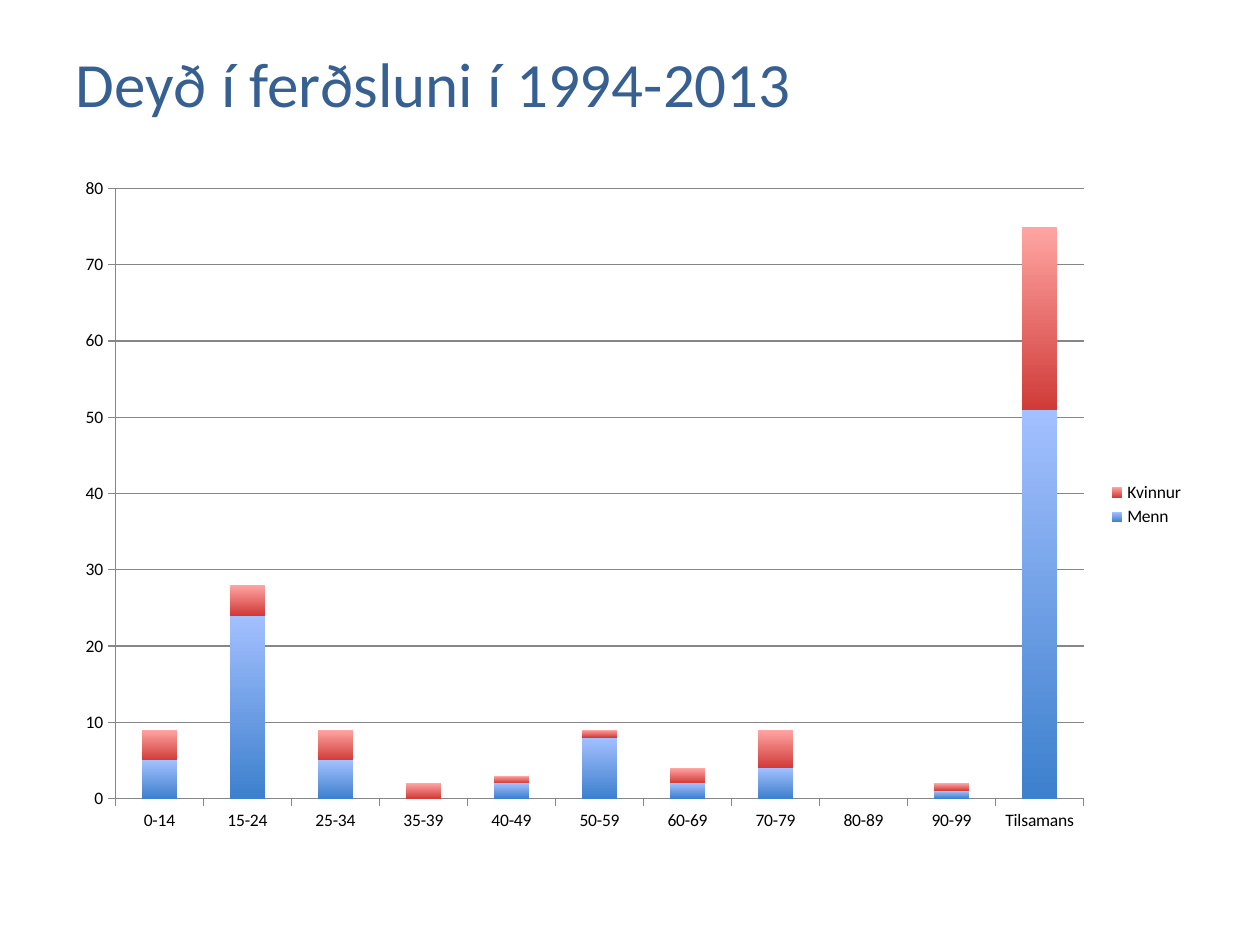
from dataclasses import dataclass
from typing import Optional

from pptx import Presentation
from pptx.chart.data import CategoryChartData
from pptx.dml.color import RGBColor
from pptx.enum.chart import XL_CHART_TYPE as ChartType
from pptx.enum.chart import XL_LEGEND_POSITION as LegendPosition
from pptx.enum.chart import XL_TICK_MARK as TickMark
from pptx.enum.text import MSO_ANCHOR as Anchor
from pptx.enum.text import PP_ALIGN as Align
from pptx.util import Cm, Pt

FONT = "Calibri"
AXIS_COLOR = "868686"
AGE_GROUPS = ["0-14", "15-24", "25-34", "35-39", "40-49", "50-59",
              "60-69", "70-79", "80-89", "90-99", "Tilsamans"]


@dataclass
class Group:
    name: str
    values: list[Optional[int]]
    bottom_color: str
    top_color: str


GROUPS = [
    Group("Menn", [5, 24, 5, None, 2, 8, 2, 4, None, 1, 51], "3D80CD", "A3C0FF"),
    Group("Kvinnur", [4, 4, 4, 2, 1, 1, 2, 5, None, 1, 24], "D03B38", "FFA5A3"),
]


def color(value: str) -> RGBColor:
    return RGBColor.from_string(value)


def apply(target, formats: dict) -> None:
    for name, value in formats.items():
        setattr(target, name, value)


def format_font(font, size: float, font_color: str) -> None:
    apply(font, {"name": FONT, "size": Pt(size), "bold": False})
    font.color.rgb = color(font_color)


def format_line(line) -> None:
    line.color.rgb = color(AXIS_COLOR)
    line.width = Pt(0.75)


def add_title(slide, text: str) -> None:
    title = slide.shapes.title
    apply(title, {"left": Cm(1.27), "top": Cm(0.76),
                  "width": Cm(22.86), "height": Cm(1.8)})
    frame = title.text_frame
    apply(frame, {"text": text, "vertical_anchor": Anchor.MIDDLE, "word_wrap": True})
    paragraph = frame.paragraphs[0]
    paragraph.alignment = Align.LEFT
    format_font(paragraph.runs[0].font, 36, "376092")


def add_stacked_chart(slide, groups: list[Group]) -> None:
    data = CategoryChartData(number_format="General")
    data.categories = AGE_GROUPS
    for group in groups:
        data.add_series(group.name, group.values)
    chart = slide.shapes.add_chart(
        ChartType.COLUMN_STACKED, Cm(1.27), Cm(3.33), Cm(22.86), Cm(13.69), data).chart
    apply(chart, {"has_title": False, "has_legend": True})
    format_font(chart.font, 10, "000000")
    apply(chart.legend, {"position": LegendPosition.RIGHT, "include_in_layout": False})

    # Columns, shaded from dark at the bottom to light at the top
    plot = chart.plots[0]
    apply(plot, {"gap_width": 150, "overlap": 100, "vary_by_categories": False})
    for series, group in zip(plot.series, groups):
        fill = series.format.fill
        fill.gradient()
        fill.gradient_angle = 90
        for stop, shade in zip(fill.gradient_stops,
                               (group.bottom_color, group.top_color)):
            stop.color.rgb = color(shade)
        series.format.line.fill.background()

    # Axes and gridlines
    for axis in (chart.category_axis, chart.value_axis):
        apply(axis, {"major_tick_mark": TickMark.OUTSIDE,
                     "minor_tick_mark": TickMark.NONE})
        format_line(axis.format.line)
    value_axis = chart.value_axis
    apply(value_axis, {"minimum_scale": 0, "maximum_scale": 80, "major_unit": 10,
                       "has_major_gridlines": True})
    format_line(value_axis.major_gridlines.format.line)


def main() -> None:
    presentation = Presentation()
    apply(presentation, {"slide_width": Cm(25.4), "slide_height": Cm(19.05)})
    slide = presentation.slides.add_slide(
        presentation.slide_layouts.get_by_name("Title Only"))
    add_title(slide, "Deyð í ferðsluni í 1994-2013")
    add_stacked_chart(slide, GROUPS)
    presentation.save("out.pptx")


if __name__ == "__main__":
    main()
